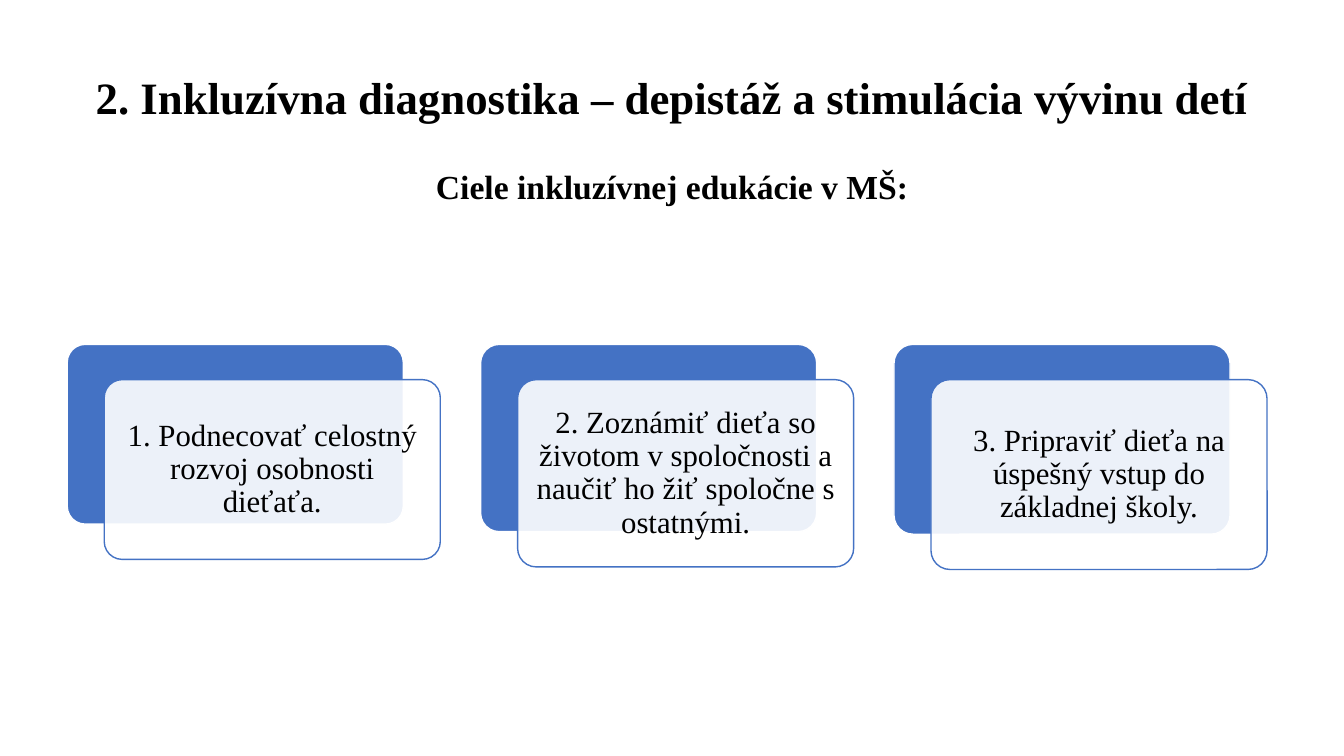
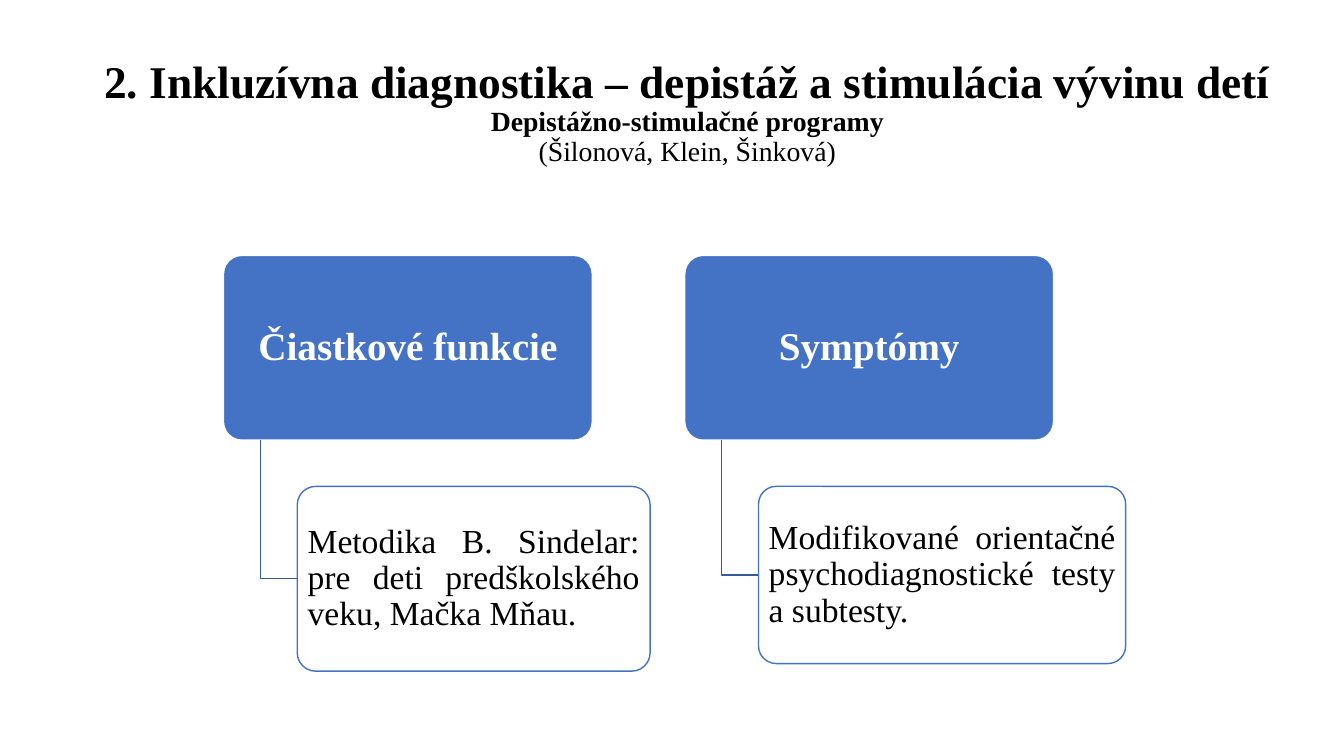
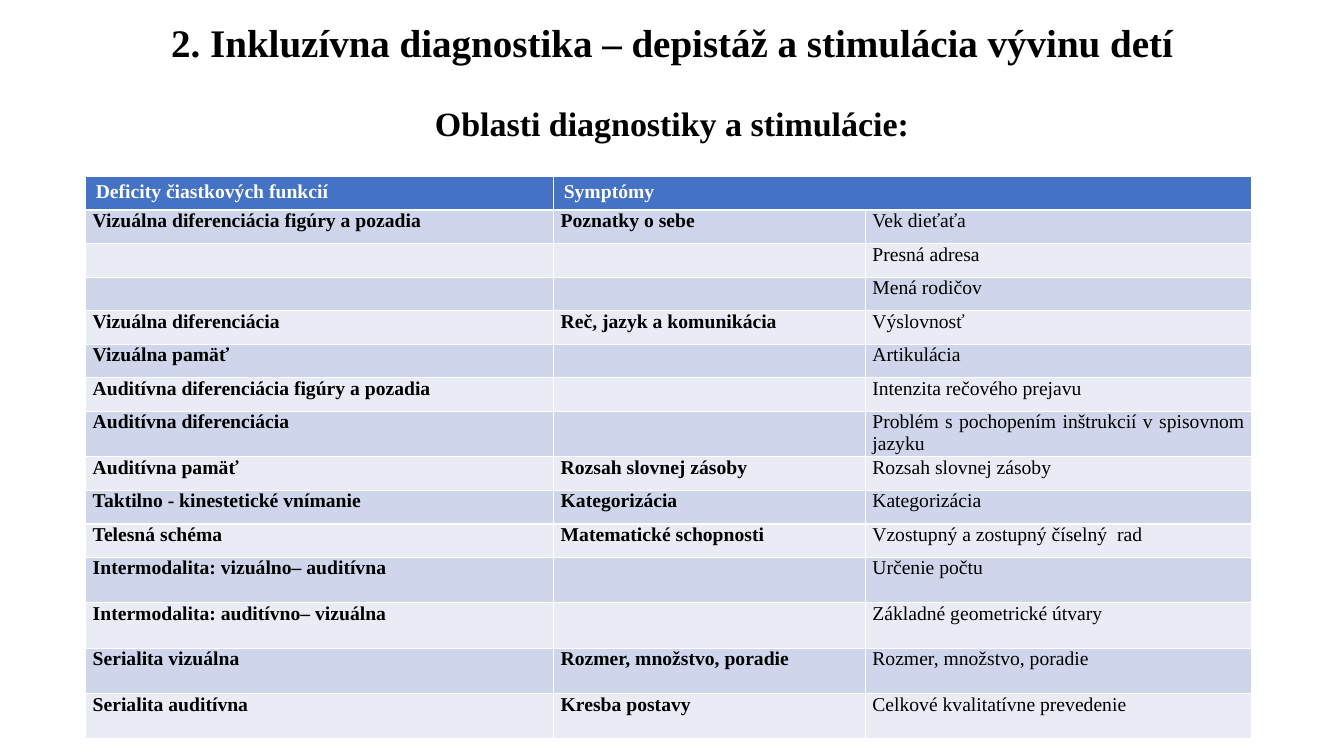
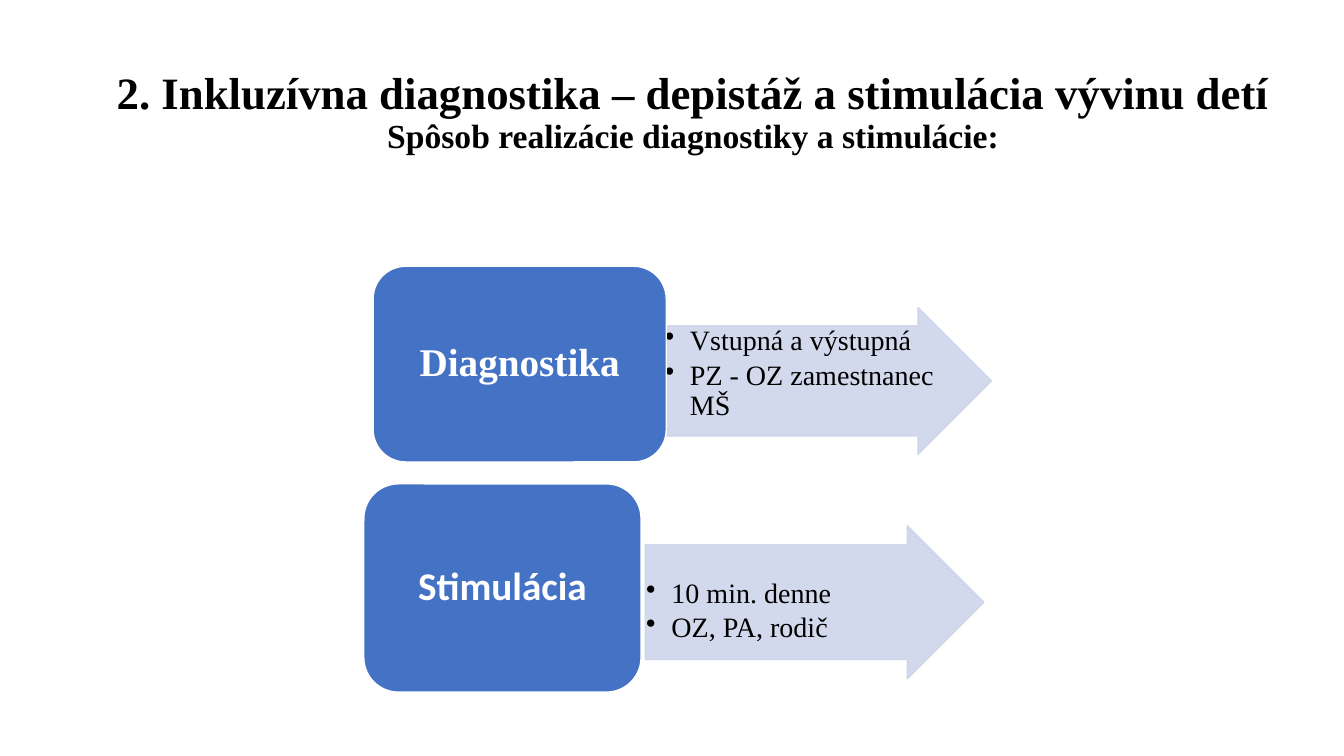
import lxml.etree
import pptx
import pptx.dml.color
import pptx.enum.shapes
import pptx.enum.text
import pptx.oxml.ns
import pptx.util

SHAPE = pptx.enum.shapes.MSO_SHAPE
ALIGN = pptx.enum.text.PP_ALIGN
ANCHOR = pptx.enum.text.MSO_ANCHOR

# The slide is a grid of 16 columns by 9 rows with square cells.
UNIT = 7.5 / 9
COLORS = {
    "blue": "4472C4",
    "elbow": "365B9D",
    "band": "CFD5EA",
    "pale": "E9EBF5",
    "white": "FFFFFF",
    "black": "000000",
}
FONT = "Times New Roman"
HEADING = "2. Inkluzívna diagnostika – depistáž a stimulácia vývinu detí"
ROUNDING = 0.1

GOALS = [
    ("1. Podnecovať celostný rozvoj osobnosti dieťaťa.", 2.14),
    ("2. Zoznámiť dieťa so životom v spoločnosti a naučiť ho žiť spoločne s ostatnými.", 2.23),
    ("3. Pripraviť dieťa na úspešný vstup do základnej školy.", 2.26),
]
PROGRAMMES = [
    ("Čiastkové funkcie",
     "Metodika B. Sindelar: pre deti predškolského veku, Mačka Mňau.", 4.2, 2.2),
    ("Symptómy",
     "Modifikované orientačné psychodiagnostické testy a subtesty.", 4.37, 2.11),
]
AREAS_HEADER = ["Deficity čiastkových funkcií", "Symptómy", ""]
LOW, HIGH = 0.4, 0.54
AREAS = [
    (LOW, "Vizuálna diferenciácia figúry a pozadia", "Poznatky o sebe", "Vek dieťaťa"),
    (LOW, "", "", "Presná adresa"),
    (LOW, "", "", "Mená rodičov"),
    (LOW, "Vizuálna diferenciácia", "Reč, jazyk a komunikácia", "Výslovnosť"),
    (LOW, "Vizuálna pamäť", "", "Artikulácia"),
    (LOW, "Auditívna diferenciácia figúry a pozadia", "", "Intenzita rečového prejavu"),
    (HIGH, "Auditívna diferenciácia", "",
     "Problém s pochopením inštrukcií v spisovnom jazyku"),
    (LOW, "Auditívna pamäť", "Rozsah slovnej zásoby", "Rozsah slovnej zásoby"),
    (LOW, "Taktilno - kinestetické vnímanie", "Kategorizácia", "Kategorizácia"),
    (LOW, "Telesná schéma", "Matematické schopnosti", "Vzostupný a zostupný číselný  rad"),
    (HIGH, "Intermodalita: vizuálno– auditívna", "", "Určenie počtu"),
    (HIGH, "Intermodalita: auditívno– vizuálna", "", "Základné geometrické útvary"),
    (HIGH, "Serialita vizuálna", "Rozmer, množstvo, poradie", "Rozmer, množstvo, poradie"),
    (HIGH, "Serialita auditívna", "Kresba postavy", "Celkové kvalitatívne prevedenie"),
]


def grid(cells):
    return pptx.util.Inches(cells * UNIT)


def rgb(name):
    return pptx.dml.color.RGBColor.from_string(COLORS[name])


def set_opacity(fill_owner, percent):
    """Make every solid colour below the given XML element translucent."""
    for color in fill_owner.iter(pptx.oxml.ns.qn("a:srgbClr")):
        alpha = lxml.etree.SubElement(color, pptx.oxml.ns.qn("a:alpha"))
        alpha.set("val", str(percent * 1000))


def write(frame, text, size, color="black", bold=False, font=FONT, align=ALIGN.CENTER,
          line=0.9, before=0, after=0, bullet=False):
    """Fill the empty first paragraph of the frame, or append one."""
    para = frame.paragraphs[0]
    if para.runs:
        para = frame.add_paragraph()
    para.alignment = align
    para.line_spacing = line
    para.space_before = pptx.util.Pt(before)
    para.space_after = pptx.util.Pt(after)
    if bullet:
        hang = pptx.util.Inches(0.25)
        properties = para._p.get_or_add_pPr()
        properties.set("marL", str(hang))
        properties.set("indent", str(-hang))
        mark = lxml.etree.SubElement(properties, pptx.oxml.ns.qn("a:buChar"))
        mark.set("char", "•")
    span = para.add_run()
    span.text = text
    span.font.name = font
    span.font.size = pptx.util.Pt(size)
    span.font.bold = bold
    span.font.color.rgb = rgb(color)


def set_margins(owner, across, down):
    owner.margin_left = owner.margin_right = pptx.util.Inches(across)
    owner.margin_top = owner.margin_bottom = pptx.util.Inches(down)


def add_box(page, box, kind=SHAPE.ROUNDED_RECTANGLE, fill="blue", line="white",
            adjust=(ROUNDING,), margins=(0.09, 0.09)):
    shape = page.shapes.add_shape(kind, *map(grid, box))
    shape.shadow.inherit = False
    for index, value in enumerate(adjust):
        shape.adjustments[index] = value
    shape.fill.solid()
    shape.fill.fore_color.rgb = rgb(fill)
    shape.line.color.rgb = rgb(line)
    shape.line.width = pptx.util.Pt(1)
    set_margins(shape.text_frame, *margins)
    return shape


def add_glass_box(page, box, margins):
    """Almost opaque white box with a blue outline."""
    shape = add_box(page, box, fill="white", line="blue", margins=margins)
    set_opacity(shape._element.spPr.find(pptx.oxml.ns.qn("a:solidFill")), 90)
    return shape


def add_page(deck, title_box, size, *subtitles):
    page = deck.slides.add_slide(deck.slide_layouts[5])
    title = page.shapes.title
    title.left, title.top, title.width, title.height = map(grid, title_box)
    frame = title.text_frame
    frame.auto_size = pptx.enum.text.MSO_AUTO_SIZE.NONE
    frame.word_wrap = True
    frame.vertical_anchor = ANCHOR.MIDDLE
    set_margins(frame, 0.1, 0.05)
    write(frame, HEADING, size, bold=True)
    for subtitle in subtitles:
        write(frame, **subtitle)
    return page


def add_goal(page, box, text):
    left, top, width, height = box
    add_box(page, box)
    card = add_glass_box(page, (left + 0.44, top + 0.42, width, height), (0.09, 0.09))
    write(card.text_frame, text, 22)


def add_elbow(page, left, top, right, bottom):
    builder = page.shapes.build_freeform(grid(left), grid(top), scale=1.0)
    builder.add_line_segments(
        [(grid(left), grid(bottom)), (grid(right), grid(bottom))], close=False)
    elbow = builder.convert_to_shape()
    elbow.shadow.inherit = False
    elbow.fill.background()
    elbow.line.color.rgb = rgb("elbow")
    elbow.line.width = pptx.util.Pt(1)


def add_programme(page, box, heading, text, detail_width, detail_height):
    """Heading box with a detail box hung below it on an elbow line."""
    left, top, width, height = box
    head = add_box(page, box, margins=(0.06, 0.04))
    write(head.text_frame, heading, 28, color="white", bold=True)
    detail_left = left + width * 0.2
    detail_top = top + height * 1.25
    add_elbow(page, left + width * 0.1, top + height,
              detail_left, detail_top + detail_height / 2)
    detail = add_glass_box(
        page, (detail_left, detail_top, detail_width, detail_height), (0.05, 0.03))
    write(detail.text_frame, text, 24, align=ALIGN.JUSTIFY)


def add_areas_table(page, left, top, widths):
    heights = [LOW] + [area[0] for area in AREAS]
    frame = page.shapes.add_table(len(heights), len(widths), grid(left), grid(top),
                                  grid(sum(widths)), grid(sum(heights)))
    table = frame.table
    for column, width in zip(table.columns, widths):
        column.width = grid(width)
    for row, height in zip(table.rows, heights):
        row.height = grid(height)
    table.cell(0, 1).merge(table.cell(0, 2))
    for row, texts in enumerate([AREAS_HEADER] + [area[1:] for area in AREAS]):
        header = row == 0
        fill = "blue" if header else ("pale", "band")[row % 2]
        for column, text in enumerate(texts):
            cell = table.cell(row, column)
            cell.fill.solid()
            cell.fill.fore_color.rgb = rgb(fill)
            if not header:
                set_margins(cell, 0.07, 0)
            if text:
                write(cell.text_frame, text, 14, line=1.0,
                      color="white" if header else "black",
                      bold=header or column < 2,
                      align=ALIGN.LEFT if header else ALIGN.JUSTIFY)


def add_step(page, tile_box, arrow_box, heading, items, font=FONT, drop=0.01):
    """Heading tile in front of an arrow whose list starts drop inches down."""
    arrow = add_box(page, arrow_box, kind=SHAPE.RIGHT_ARROW, fill="band", line="band",
                    adjust=(0.75, 0.5), margins=(0.01, 0.01))
    set_opacity(arrow._element.spPr, 90)
    arrow.text_frame.vertical_anchor = ANCHOR.TOP
    arrow.text_frame.margin_top = pptx.util.Inches(drop)
    for item in items:
        write(arrow.text_frame, item, 20, align=ALIGN.LEFT, after=3, bullet=True)
    tile = add_box(page, tile_box, adjust=(), margins=(0.12, 0.06))
    write(tile.text_frame, heading, 28, color="white", bold=True, font=font)


def build_goals(deck):
    page = add_page(deck, (0.8, 0.73, 14.4, 1.9), 32,
                    dict(text="Ciele inkluzívnej edukácie v MŠ:", size=24, bold=True, before=33))
    for index, (text, height) in enumerate(GOALS):
        add_goal(page, (0.8 + 4.92 * index, 4.1, 4, height), text)


def build_programmes(deck):
    page = add_page(deck, (1.1, 0.48, 14.16, 1.74), 32.4,
                    dict(text="Depistážno-stimulačné programy", size=19.8, bold=True),
                    dict(text="(Šilonová, Klein, Šinková)", size=19.8))
    for index, programme in enumerate(PROGRAMMES):
        add_programme(page, (2.66 + 5.49 * index, 3.04, 4.39, 2.2), *programme)


def build_areas(deck):
    page = add_page(deck, (1.1, 0.37, 13.8, 1.26), 27.9,
                    dict(text="Oblasti diagnostiky a stimulácie:", size=24.3, bold=True, before=29))
    add_areas_table(page, 1.02, 2.1, (5.57, 3.71, 4.6))


def build_steps(deck):
    page = add_page(deck, (1.1, 0.48, 14.3, 1.74), 32,
                    dict(text="Spôsob realizácie diagnostiky a stimulácie:", size=24, bold=True))
    add_step(page, (4.44, 3.17, 3.49, 2.33), (7.9, 3.66, 3.9, 1.75),
             "Diagnostika", ["Vstupná a výstupná", "PZ - OZ zamestnanec MŠ"])
    add_step(page, (4.33, 5.76, 3.3, 2.48), (7.68, 6.26, 4.03, 1.82),
             "Stimulácia", ["10 min. denne", "OZ, PA, rodič"], font="Calibri", drop=0.34)


def main():
    deck = pptx.Presentation()
    deck.slide_width = pptx.util.Inches(13.33)
    deck.slide_height = pptx.util.Inches(7.5)
    build_goals(deck)
    build_programmes(deck)
    build_areas(deck)
    build_steps(deck)
    deck.save("out.pptx")


if __name__ == "__main__":
    main()
